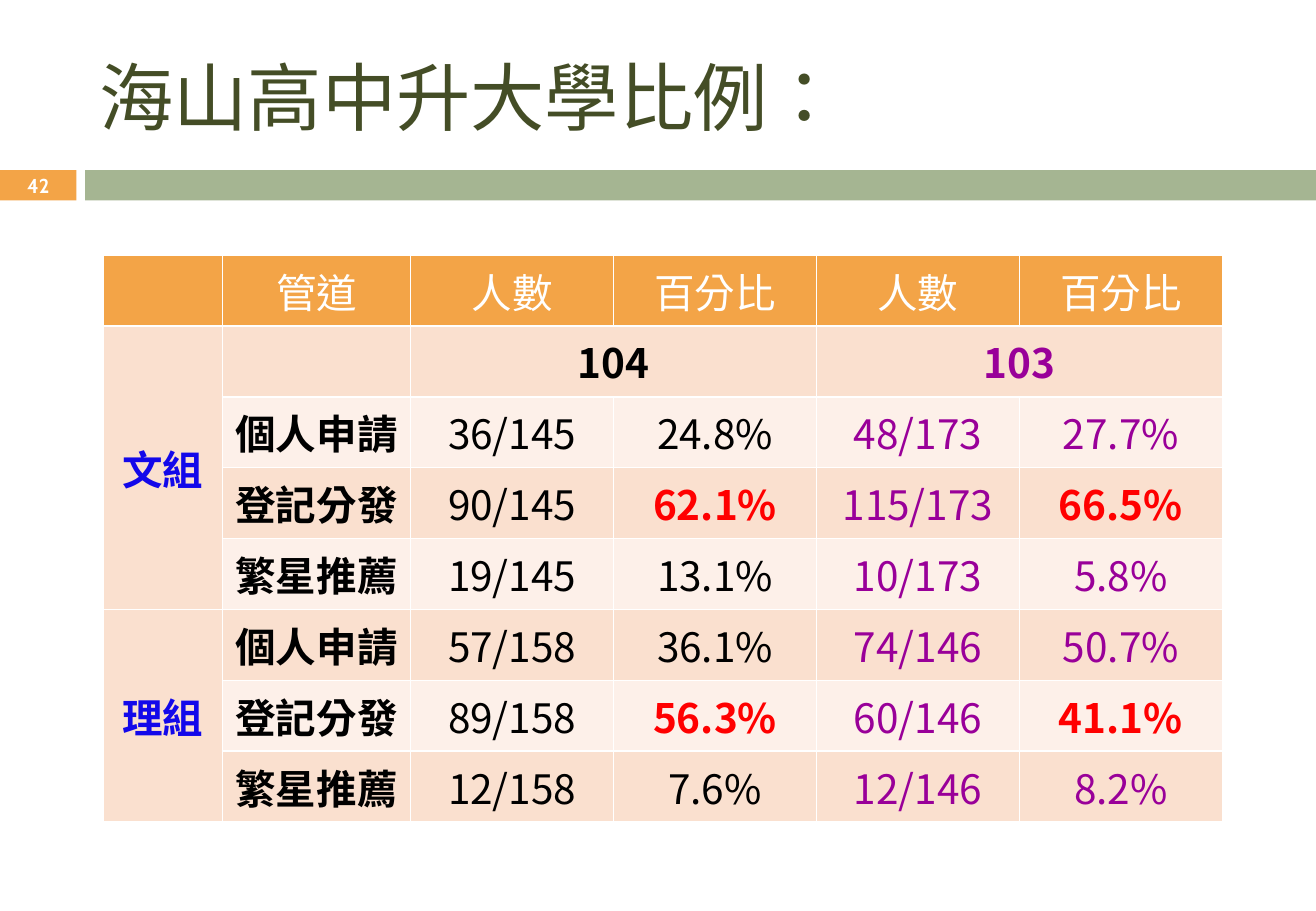
from lxml import etree
from pptx import Presentation, util as u
from pptx.dml.color import RGBColor
from pptx.enum import shapes, text
from pptx.oxml.ns import qn

PX = 9144  # 100 px to the inch


class Theme:
    orange, green, olive = "F3A447", "A5B592", "444D26"
    dark, light, white = "FAE0CF", "FDF0E9", "FFFFFF"
    black, blue, purple, red = "000000", "1308EA", "990099", "FF0000"
    latin, cjk = "Cabin", "Noto Sans CJK SC"
    title, body, small = 44, 24, 11.9


HEAD = ["", "管道", "人數", "百分比", "人數", "百分比"]
YEARS = ["", "", "104", "", "103", ""]
GROUPS = {
    "文組": [
        ["個人申請", "36/145", "24.8%", "48/173", "27.7%"],
        ["登記分發", "90/145", "62.1%", "115/173", "66.5%"],
        ["繁星推薦", "19/145", "13.1%", "10/173", "5.8%"],
    ],
    "理組": [
        ["個人申請", "57/158", "36.1%", "74/146", "50.7%"],
        ["登記分發", "89/158", "56.3%", "60/146", "41.1%"],
        ["繁星推薦", "12/158", "7.6%", "12/146", "8.2%"],
    ],
}
COLS = [98, 155, 167, 167, 167, 167]


def px(*nums):
    return [u.Emu(n * PX) for n in nums]


def write(frame, words, size=Theme.body, color=Theme.black, font=Theme.cjk,
          bold=False, align=text.PP_ALIGN.CENTER):
    para = frame.paragraphs[0]
    para.alignment = align
    run = para.add_run()
    run.text = words
    run.font.size = u.Pt(size)
    run.font.bold = bold
    run.font.color.rgb = RGBColor.from_string(color)
    run.font.name = font
    # East Asian face and language
    props = run._r.get_or_add_rPr()
    props.set("lang", "zh-TW")
    etree.SubElement(props, qn("a:ea")).set("typeface", Theme.cjk)


def label(slide, box, words, **form):
    frame = slide.shapes.add_textbox(*px(*box)).text_frame
    frame.word_wrap = True
    frame.vertical_anchor = text.MSO_ANCHOR.MIDDLE
    write(frame, words, **form)


def bar(slide, box, color):
    rect = slide.shapes.add_shape(shapes.MSO_SHAPE.RECTANGLE, *px(*box))
    rect.shadow.inherit = False
    rect.fill.solid()
    rect.fill.fore_color.rgb = RGBColor.from_string(color)
    rect.line.fill.background()


def header(slide, x, y, wide):
    # Title
    label(slide, (x + 72, y + 25, 966, 108), "海山高中升大學比例：", size=Theme.title,
          color=Theme.olive, font=Theme.latin, align=text.PP_ALIGN.LEFT)
    # Band with slide number
    bar(slide, (x, y + 140, 63, 25), Theme.orange)
    bar(slide, (x + 70, y + 140, wide - 70, 25), Theme.green)
    label(slide, (x, y + 139, 63, 27), "42", size=Theme.small,
          color=Theme.white, font=Theme.latin, bold=True)


def paint(cell, color):
    cell.fill.solid()
    cell.fill.fore_color.rgb = RGBColor.from_string(color)
    cell.vertical_anchor = text.MSO_ANCHOR.MIDDLE
    props = cell._tc.get_or_add_tcPr()
    # White borders go before the fill
    for spot, side in enumerate(("lnL", "lnR", "lnT", "lnB")):
        line = etree.Element(qn("a:" + side), w=str(u.Pt(1)))
        fill = etree.SubElement(line, qn("a:solidFill"))
        etree.SubElement(fill, qn("a:srgbClr")).set("val", Theme.white)
        props.insert(spot, line)


def style(row, col):
    """Colour and weight of the text in one cell."""
    if row == 0:
        return Theme.white, False
    if col == 0:
        return Theme.blue, True
    if col in (3, 5) and row in (3, 6):
        return Theme.red, True
    return (Theme.purple if col > 3 else Theme.black), row == 1 or col == 1


def grid(slide, x, y, high):
    rows = [HEAD, YEARS] + [[""] + line for part in GROUPS.values() for line in part]
    rows[1][0], rows[5][0] = GROUPS
    table = slide.shapes.add_table(
        len(rows), len(COLS), *px(x, y, sum(COLS), high)).table
    for col, wide in zip(table.columns, COLS):
        col.width = u.Emu(wide * PX)
    for r, line in enumerate(rows):
        table.rows[r].height = u.Emu(high * PX // len(rows))
        for c, words in enumerate(line):
            cell = table.cell(r, c)
            band = Theme.dark if r % 2 or c == 0 else Theme.light
            paint(cell, Theme.orange if r == 0 else band)
            if words:
                color, bold = style(r, c)
                write(cell.text_frame, words, color=color, bold=bold)
            else:
                cell.text_frame.paragraphs[0].font.size = u.Pt(Theme.body)
    # Group names span their rows, years span two columns
    for start, end in (((1, 0), (4, 0)), ((5, 0), (7, 0)),
                       ((1, 2), (1, 3)), ((1, 4), (1, 5))):
        table.cell(*start).merge(table.cell(*end))


def main():
    deck = Presentation()
    deck.slide_width, deck.slide_height = px(1083, 750)
    slide = deck.slides.add_slide(deck.slide_layouts[6])
    header(slide, 0, 0, 1083)
    grid(slide, 85, 210, 467)
    deck.save("out.pptx")


if __name__ == "__main__":
    main()
